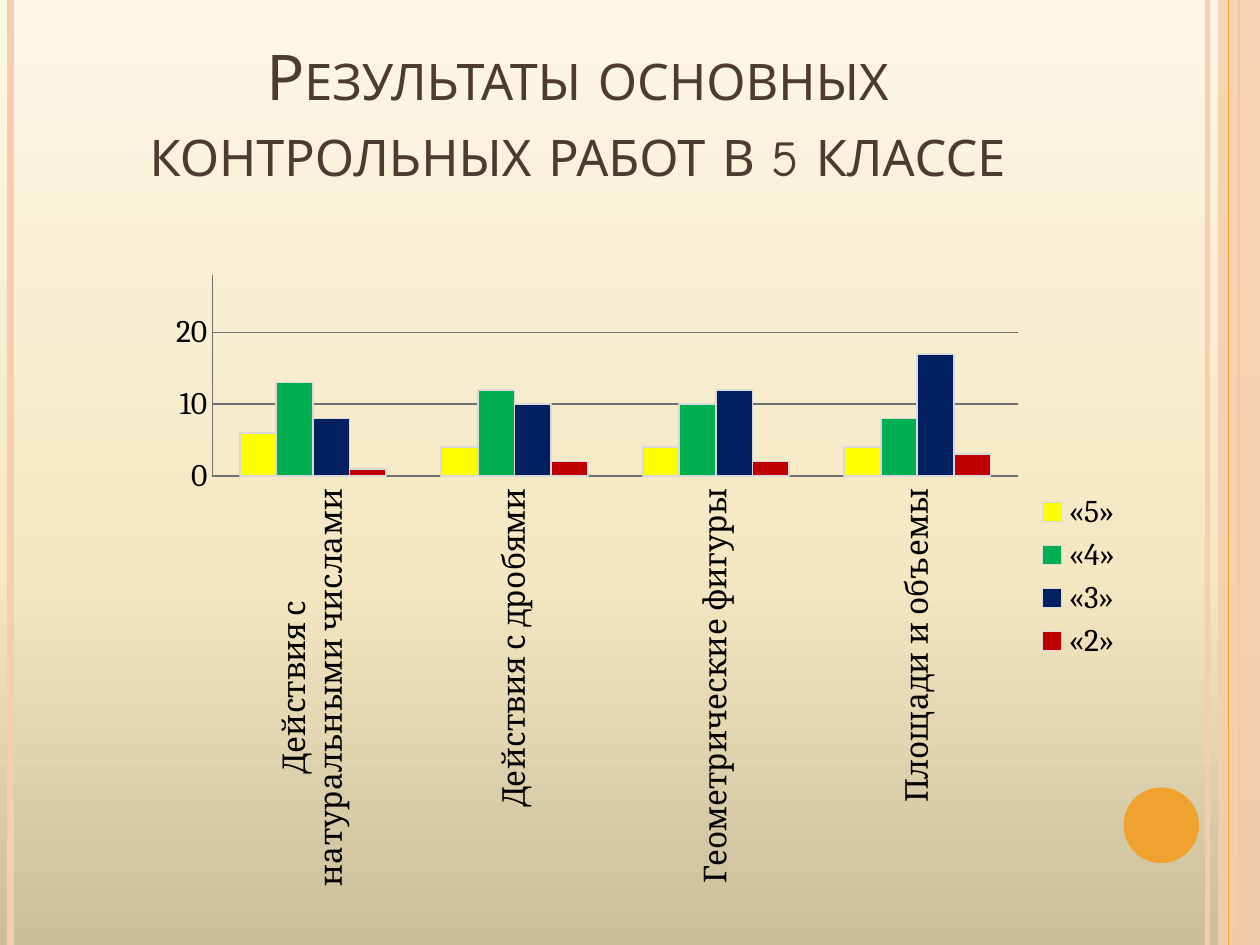
from copy import deepcopy

from lxml import etree
from pptx import Presentation
from pptx import util as u
from pptx.chart.data import CategoryChartData
from pptx.dml.color import RGBColor
from pptx.enum import chart as ch, shapes, text
from pptx.oxml import parse_xml
from pptx.oxml.ns import nsdecls, qn

SAND = RGBColor(0xCB, 0xBE, 0x9A)
CREAM = RGBColor(0xF4, 0xE7, 0xC2)
IVORY = RGBColor(0xFD, 0xF7, 0xE6)
PEACH = RGBColor(0xF6, 0xCE, 0xAD)
ORANGE = RGBColor(0xF0, 0xA2, 0x2E)
BROWN = RGBColor(0x4E, 0x3B, 0x30)
BLACK = RGBColor(0, 0, 0)
GREY = RGBColor(0x70, 0x70, 0x70)
PALE = RGBColor(0xD9, 0xD9, 0xD9)
YELLOW = RGBColor(0xFF, 0xFF, 0x00)
GREEN = RGBColor(0x00, 0xB0, 0x50)
NAVY = RGBColor(0x00, 0x20, 0x60)
RED = RGBColor(0xC0, 0x00, 0x00)

COLUMNS, ROWS = 120, 90
TOPICS = ["Действия с\nнатуральными числами", "Действия с дробями",
          "Геометрические фигуры", "Площади и объемы"]
MARKS = [("«5»", YELLOW, (6, 4, 4, 4)),
         ("«4»", GREEN, (13, 12, 10, 8)),
         ("«3»", NAVY, (8, 10, 12, 17)),
         ("«2»", RED, (1, 2, 2, 3))]


def set_opacity(fill_owner, percent):
    for color in fill_owner.iter(qn("a:srgbClr")):
        etree.SubElement(color, qn("a:alpha"), val=str(percent * 1000))


class SlideBuilder:
    """Style and current slide; lengths are columns and rows of the grid."""
    title_font, chart_font = "Comic Neue", "Cambria"

    def __init__(self, deck):
        self.cell_width = deck.slide_width / COLUMNS
        self.cell_height = deck.slide_height / ROWS
        self.slide = deck.slides.add_slide(deck.slide_layouts[6])

    def place(self, left, top, width, height):
        return (u.Emu(round(left * self.cell_width)), u.Emu(round(top * self.cell_height)),
                u.Emu(round(width * self.cell_width)), u.Emu(round(height * self.cell_height)))

    def background(self, stops):
        """Gradient rising from the bottom edge; stops are (percent, color)."""
        fill = self.slide.background.fill
        fill.gradient()
        fill.gradient_angle = 90
        first = fill.gradient_stops[0]._gs
        while len(fill.gradient_stops) < len(stops):
            first.addnext(deepcopy(first))
        for stop, (percent, color) in zip(fill.gradient_stops, stops):
            stop.color.rgb = color
            stop.position = percent / 100

    def stripe(self, column, color, points, opacity=100):
        x, top, _, height = self.place(column, 0, 0, ROWS)
        line = self.slide.shapes.add_connector(shapes.MSO_CONNECTOR.STRAIGHT, x, top, x, height)
        line.line.color.rgb = color
        line.line.width = u.Pt(points)
        properties = line._element.spPr
        if opacity < 100:
            set_opacity(properties, opacity)
        etree.SubElement(properties, qn("a:effectLst"))

    def shape(self, kind, area, color, opacity=100):
        shape = self.slide.shapes.add_shape(kind, *self.place(*area))
        shape.shadow.inherit = False
        shape.fill.solid()
        shape.fill.fore_color.rgb = color
        shape.line.fill.background()
        if opacity < 100:
            set_opacity(shape._element.spPr, opacity)

    def title(self, area, words):
        box = self.slide.shapes.add_textbox(*self.place(*area))
        frame = box.text_frame
        frame.word_wrap = True
        frame.vertical_anchor = text.MSO_ANCHOR.BOTTOM
        para = frame.paragraphs[0]
        para.alignment = text.PP_ALIGN.CENTER
        span = para.add_run()
        span.text = words
        span.font.name = self.title_font
        span.font.size = u.Pt(36)
        span.font.color.rgb = BROWN
        span.font._element.set("cap", "small")

    def column_chart(self, area, categories, series, plot):
        """Clustered columns; plot is the inner area in shares of the chart."""
        data = CategoryChartData()
        data.categories = categories
        for name, _, values in series:
            data.add_series(name, values)
        chart = self.slide.shapes.add_chart(
            ch.XL_CHART_TYPE.COLUMN_CLUSTERED, *self.place(*area), data).chart
        chart.has_title = False
        chart.font.name = self.chart_font
        chart.font.size = u.Pt(18)
        chart.font.color.rgb = BLACK
        chart.has_legend = True
        chart.legend.position = ch.XL_LEGEND_POSITION.RIGHT
        chart.legend.include_in_layout = False

        bars = chart.plots[0]
        bars.vary_by_categories = False
        bars.gap_width, bars.overlap = 150, 0
        for column, (_, color, _) in zip(bars.series, series):
            column.format.fill.solid()
            column.format.fill.fore_color.rgb = color
            column.format.line.color.rgb = PALE
            column.format.line.width = u.Pt(1)

        scale = chart.value_axis
        scale.minimum_scale, scale.maximum_scale, scale.major_unit = 0, 28, 10
        scale.has_major_gridlines = True
        for axis in (chart.category_axis, scale):
            axis.major_tick_mark = axis.minor_tick_mark = ch.XL_TICK_MARK.NONE
        for rule in (chart.category_axis, scale, scale.major_gridlines):
            rule.format.line.color.rgb = GREY
            rule.format.line.width = u.Pt(0.75)

        names = chart.category_axis
        names.tick_label_position = ch.XL_TICK_LABEL_POSITION.LOW
        names.tick_labels.font.size = u.Pt(18)
        body = names._element.find(qn("c:txPr")).find(qn("a:bodyPr"))
        body.set("rot", "-5400000")
        body.set("vert", "horz")
        self.fix_plot_area(chart, plot)

    @staticmethod
    def fix_plot_area(chart, plot):
        settings = [("layoutTarget", "inner"), ("xMode", "edge"), ("yMode", "edge")]
        settings += zip("xywh", plot)
        inner = "".join(f'<c:{tag} val="{value}"/>' for tag, value in settings)
        plot_area = chart._chartSpace.chart.plotArea
        for old in plot_area.findall(qn("c:layout")):
            plot_area.remove(old)
        plot_area.insert(0, parse_xml(
            f'<c:layout {nsdecls("c")}><c:manualLayout>{inner}</c:manualLayout></c:layout>'))


def main():
    deck = Presentation()
    deck.slide_width, deck.slide_height = u.Inches(10), u.Inches(7.5)
    page = SlideBuilder(deck)
    page.background([(0, SAND), (40, CREAM), (100, IVORY)])
    page.stripe(115, PEACH, 3, opacity=93)
    page.stripe(1, PEACH, 4.5)
    page.stripe(118, ORANGE, 1.5)
    page.shape(shapes.MSO_SHAPE.RECTANGLE, (116, 0, 4, ROWS), PEACH, opacity=87)
    page.stripe(117, ORANGE, 0.75)
    page.shape(shapes.MSO_SHAPE.OVAL, (107, 75, 7.2, 7.2), ORANGE)
    page.title((6, 3.6, 98, 15), "Результаты основных контрольных работ в 5 классе")
    page.column_chart((14.6, 25, 93.6, 59.8), TOPICS, MARKS, plot=(0.06, 0.02, 0.82, 0.32))
    deck.save("out.pptx")


if __name__ == "__main__":
    main()
